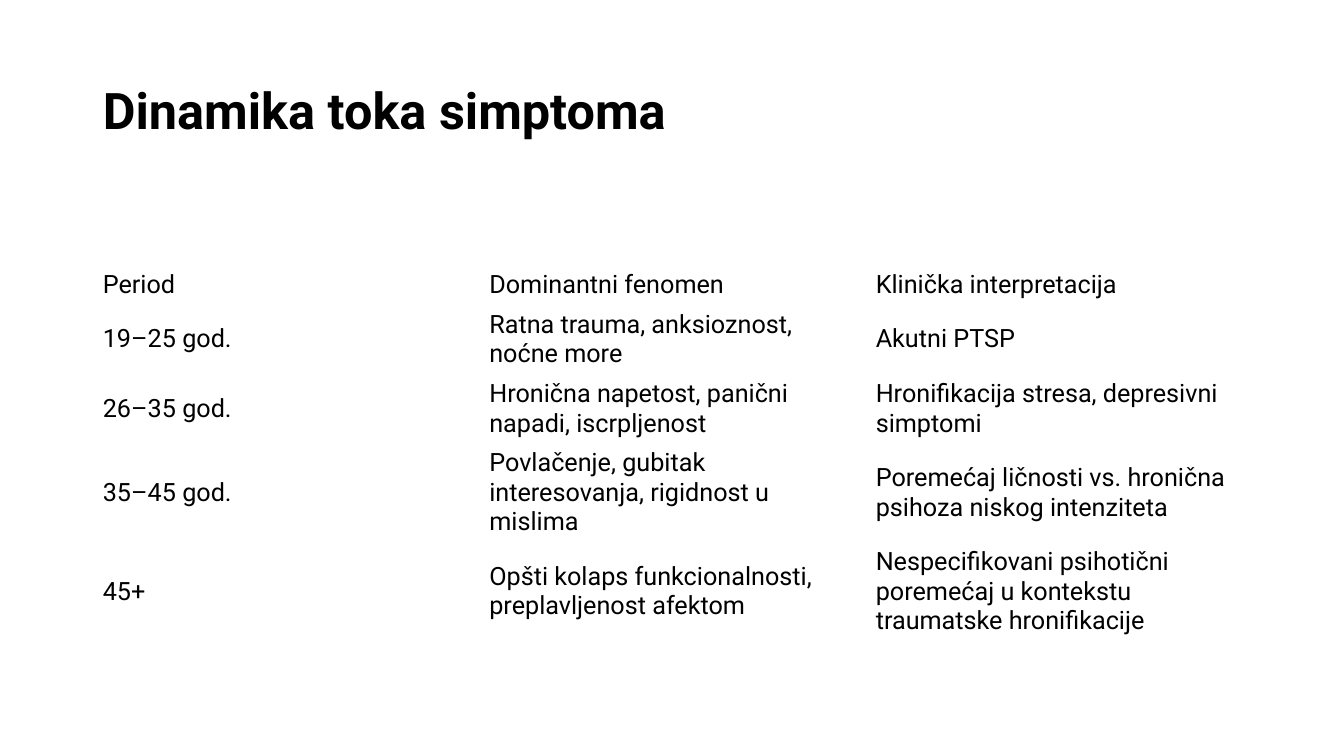
from typing import NamedTuple

from pptx import Presentation
from pptx import util as u
from pptx.dml.color import RGBColor
from pptx.enum import text

BLACK = RGBColor(0x00, 0x00, 0x00)
FONT = "Roboto"
LEFT, WIDTH = u.Inches(0.92), u.Inches(11.5)
LINE_HEIGHT, CELL_PADDING = 0.29, 0.1


class Phase(NamedTuple):
    period: str
    phenomenon: str
    interpretation: str
    lines: int


PHASES = [
    Phase("Period", "Dominantni fenomen", "Klinička interpretacija", 1),
    Phase("19–25 god.", "Ratna trauma, anksioznost, noćne more", "Akutni PTSP", 2),
    Phase("26–35 god.", "Hronična napetost, panični napadi, iscrpljenost",
          "Hronifikacija stresa, depresivni simptomi", 2),
    Phase("35–45 god.", "Povlačenje, gubitak interesovanja, rigidnost u mislima",
          "Poremećaj ličnosti vs. hronična psihoza niskog intenziteta", 3),
    Phase("45+", "Opšti kolaps funkcionalnosti, preplavljenost afektom",
          "Nespecifikovani psihotični poremećaj u kontekstu traumatske hronifikacije", 3),
]


def write(frame, wording: str, size: int, bold: bool = False) -> None:
    """Fill a text frame with one left-aligned paragraph."""
    frame.text = wording
    paragraph = frame.paragraphs[0]
    paragraph.alignment = text.PP_ALIGN.LEFT
    font = paragraph.runs[0].font
    font.name, font.size, font.bold = FONT, u.Pt(size), bold
    font.color.rgb = BLACK


def add_heading(slide, wording: str) -> None:
    heading = slide.shapes.title
    heading.left, heading.top = LEFT, u.Inches(0.4)
    heading.width, heading.height = WIDTH, u.Inches(1.45)
    frame = heading.text_frame
    write(frame, wording, 36, bold=True)
    frame.auto_size = text.MSO_AUTO_SIZE.NONE
    frame.vertical_anchor = text.MSO_ANCHOR.MIDDLE
    frame.paragraphs[0].line_spacing = 0.9


def add_phases(slide, phases: list[Phase]) -> None:
    table = slide.shapes.add_table(
        len(phases), 3, LEFT, u.Inches(2.63), WIDTH, u.Inches(3.5)).table
    table.first_row = table.horz_banding = False
    for row, phase in zip(table.rows, phases):
        row.height = u.Inches(phase.lines * LINE_HEIGHT + CELL_PADDING)
        for cell, wording in zip(row.cells, phase[:3]):
            cell.fill.background()
            cell.vertical_anchor = text.MSO_ANCHOR.MIDDLE
            write(cell.text_frame, wording, 18)


def main() -> None:
    presentation = Presentation()
    presentation.slide_width = u.Inches(13.33)
    presentation.slide_height = u.Inches(7.5)
    # Title-only layout
    slide = presentation.slides.add_slide(presentation.slide_layouts[5])

    # Heading and table of symptom phases
    add_heading(slide, "Dinamika toka simptoma")
    add_phases(slide, PHASES)

    presentation.save("out.pptx")


if __name__ == "__main__":
    main()
